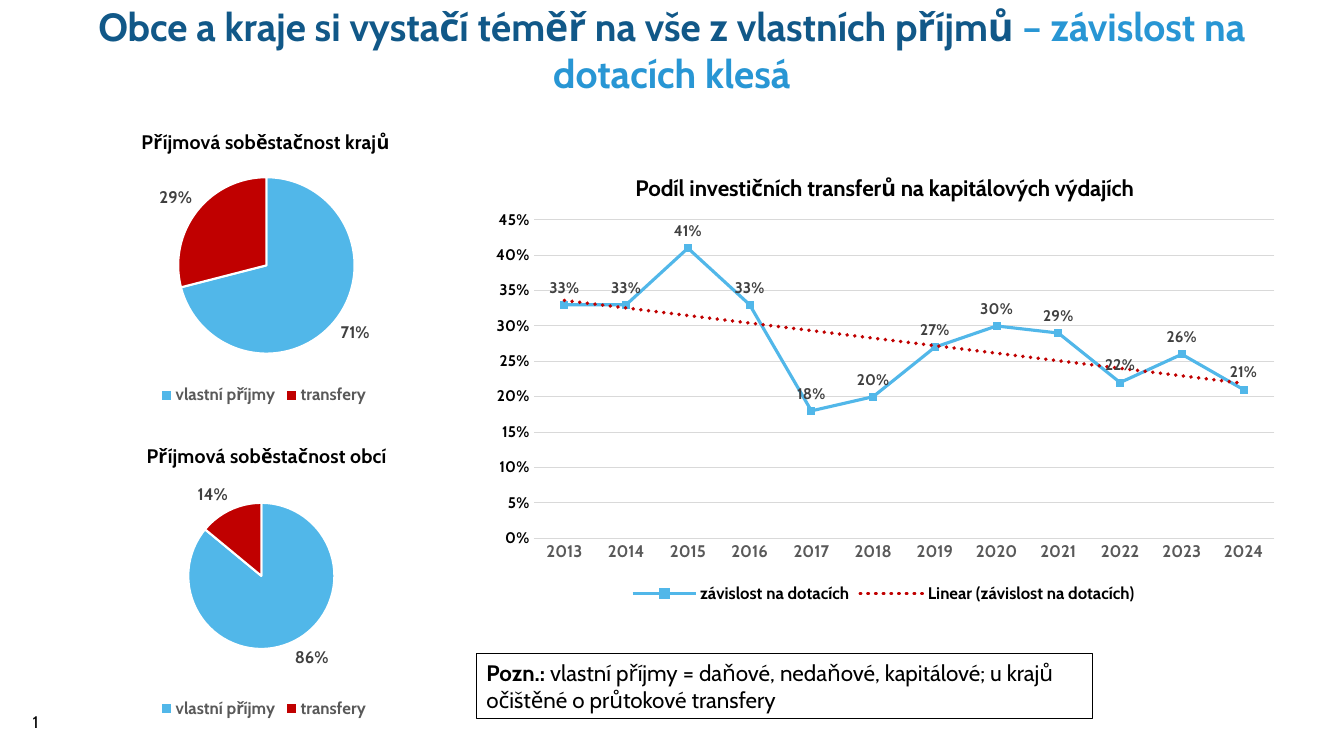
import pptx
import pptx.util
import pptx.chart.data
import pptx.dml.color
import pptx.enum.chart
import pptx.enum.dml
import pptx.enum.shapes
import pptx.enum.text
import pptx.oxml
import pptx.oxml.ns

Cm, Pt = pptx.util.Cm, pptx.util.Pt
KIND = pptx.enum.chart.XL_CHART_TYPE
SPOT = pptx.enum.chart.XL_LABEL_POSITION
TICK = pptx.enum.chart.XL_TICK_MARK
ALIGN = pptx.enum.text.PP_ALIGN
MID = pptx.enum.text.MSO_ANCHOR.MIDDLE

# Content
FONT = "Cabin"
BLUE, RED, BLACK, GRAY, DARK, PALE = "51B7E9", "C00000", "000000", "595959", "404040", "D9D9D9"
TITLE = [("Obce a kraje si vystačí téměř na vše z vlastních příjmů ", "115888"),
         ("– závislost na dotacích klesá", "2896D4")]
NOTE = [("Pozn.: ", True),
        ("vlastní příjmy = daňové, nedaňové, kapitálové; u krajů očištěné o průtokové transfery", False)]
PARTS = ["vlastní příjmy", "transfery"]
# heading, values, heading place, plot place (fractions of the chart)
PIES = [("Příjmová soběstačnost krajů", (0.71, 0.29), (0.25, 0.06), (0.33, 0.23, 0.35, 0.59)),
        ("Příjmová soběstačnost obcí", (0.86, 0.14), (0.26, 0.06), (0.35, 0.27, 0.29, 0.49))]
TREND = "Podíl investičních transferů na kapitálových výdajích"
SERIES = "závislost na dotacích"
YEARS = [str(y) for y in range(2013, 2025)]
SHARES = [0.33, 0.33, 0.41, 0.33, 0.18, 0.2, 0.27, 0.3, 0.29, 0.22, 0.26, 0.21]
NS = pptx.oxml.ns.nsdecls("c", "a")


def color(hex):
    return pptx.dml.color.RGBColor.from_string(hex)


def style(font, size, hex=BLACK, bold=False):
    font.name, font.size, font.bold = FONT, Pt(size), bold
    font.color.rgb = color(hex)


def paint(fill, hex):
    fill.solid()
    fill.fore_color.rgb = color(hex)


def place(node, spots, inner=False):
    """Put a manual layout into a chart title or plot area."""
    for old in node.findall(pptx.oxml.ns.qn("c:layout")):
        node.remove(old)
    rows = '<c:layoutTarget val="inner"/>' if inner else ""
    rows += "".join(f'<c:{k}Mode val="edge"/>' for k in "xy")
    rows += "".join(f'<c:{k} val="{v}"/>' for k, v in zip("xywh", spots))
    item = pptx.oxml.parse_xml(
        f"<c:layout {NS}><c:manualLayout>{rows}</c:manualLayout></c:layout>")
    node.insert(1 if node.tag.endswith("title") else 0, item)


def chart(kind, box, head, size, cats, name, vals, spot, plot, tint):
    data = pptx.chart.data.CategoryChartData(number_format="0%")
    data.categories = cats
    data.add_series(name, vals)
    c = slide.shapes.add_chart(kind, *map(Cm, box), data).chart
    style(c.font, 10)
    c.has_title = True
    para = c.chart_title.text_frame.paragraphs[0]
    para.text = head
    style(para.font, size, BLACK, True)
    c.chart_title.include_in_layout = False
    place(c.chart_title._element, spot)
    place(c._chartSpace.chart.plotArea, plot, True)
    c.has_legend = True
    c.legend.position = pptx.enum.chart.XL_LEGEND_POSITION.BOTTOM
    c.legend.include_in_layout = False
    style(c.legend.font, 12, tint, True)
    return c


def label(ser, size, spot):
    tags = ser.data_labels
    tags.show_value = True
    tags.number_format, tags.number_format_is_linked = "0%", False
    tags.position = spot
    style(tags.font, size, DARK, True)


deck = pptx.Presentation()
deck.slide_width, deck.slide_height = Cm(33.87), Cm(19.05)
slide = deck.slides.add_slide(deck.slide_layouts[5])

# Title
head = slide.shapes.title
head.left, head.top, head.width, head.height = Cm(1.93), Cm(0), Cm(30), Cm(2.49)
frame = head.text_frame
frame.vertical_anchor, frame.word_wrap = MID, True
para = frame.paragraphs[0]
para.alignment = ALIGN.CENTER
for text, hex in TITLE:
    run = para.add_run()
    run.text = text
    style(run.font, 28, hex, True)

# Slide number
para = slide.shapes.add_textbox(Cm(0), Cm(17.65), Cm(1.22), Cm(1.09)).text_frame
para.vertical_anchor, para.word_wrap = MID, True
para = para.paragraphs[0]
para._p.append(pptx.oxml.parse_xml(
    f'<a:fld {NS} id="{{B6F15528-21DE-4FAA-801E-634DDDAF4B2B}}" type="slidenum">'
    f'<a:rPr lang="cs-CZ" sz="1200"><a:solidFill><a:srgbClr val="{BLACK}"/></a:solidFill>'
    f'<a:latin typeface="{FONT}"/></a:rPr><a:t>3</a:t></a:fld>'))
para.alignment = ALIGN.RIGHT

# Pies
for i, (text, vals, spot, plot) in enumerate(PIES):
    box = (0.3, 2.69 + i * 7.9, 12.7, 7.62)
    pie = chart(KIND.PIE, box, text, 14, PARTS, "Series 1", vals, spot, plot, GRAY)
    ser = pie.plots[0].series[0]
    pie.plots[0].vary_by_categories = True
    for k, hex in enumerate((BLUE, RED)):
        form = ser.points[k].format
        paint(form.fill, hex)
        paint(form.line.fill, "FFFFFF")
        form.line.width = Pt(1.5)
    label(ser, 12, SPOT.OUTSIDE_END)

# Note
note = slide.shapes.add_shape(pptx.enum.shapes.MSO_SHAPE.RECTANGLE,
                              Cm(12.01), Cm(16.48), Cm(15.52), Cm(1.63))
note.shadow.inherit = False
note.fill.background()
paint(note.line.fill, BLACK)
note.line.width = Pt(0.75)
note.text_frame.word_wrap = True
note.text_frame.vertical_anchor = pptx.enum.text.MSO_ANCHOR.TOP
para = note.text_frame.paragraphs[0]
para.alignment = ALIGN.LEFT
for text, bold in NOTE:
    run = para.add_run()
    run.text = text
    style(run.font, 16, BLACK, bold)

# Line chart with its linear trend
line = chart(KIND.LINE_MARKERS, (12.01, 3.68, 20.52, 11.63), TREND, 16, YEARS, SERIES,
             SHARES, (0.19, 0.05), (0.07, 0.16, 0.91, 0.69), BLACK)
line.plots[0].vary_by_categories = False
ser = line.plots[0].series[0]
ser.smooth = False
paint(ser.format.line.fill, BLUE)
ser.format.line.width = Pt(2.25)
ser.marker.style, ser.marker.size = pptx.enum.chart.XL_MARKER_STYLE.SQUARE, 5
paint(ser.marker.format.fill, BLUE)
paint(ser.marker.format.line.fill, BLUE)
label(ser, 11, SPOT.ABOVE)
ser._element.find(pptx.oxml.ns.qn("c:cat")).addprevious(pptx.oxml.parse_xml(
    f'<c:trendline {NS}><c:name>Linear ({SERIES})</c:name><c:spPr>'
    f'<a:ln w="{Pt(2.75)}" cap="rnd"><a:solidFill><a:srgbClr val="{RED}"/></a:solidFill>'
    '<a:prstDash val="sysDot"/></a:ln></c:spPr><c:trendlineType val="linear"/>'
    '<c:dispRSqr val="0"/><c:dispEq val="0"/></c:trendline>'))

# Axes
cat, val = line.category_axis, line.value_axis
for axis, size, hex in ((cat, 12, GRAY), (val, 11, BLACK)):
    axis.major_tick_mark = axis.minor_tick_mark = TICK.NONE
    style(axis.tick_labels.font, size, hex, True)
val.minimum_scale, val.maximum_scale, val.major_unit = 0, 0.45, 0.05
val.tick_labels.number_format, val.tick_labels.number_format_is_linked = "0%", False
val.format.line.fill.background()
val.has_major_gridlines = True
for rule in (cat.format.line, val.major_gridlines.format.line):
    paint(rule.fill, PALE)
    rule.width = Pt(0.75)

deck.save("out.pptx")
